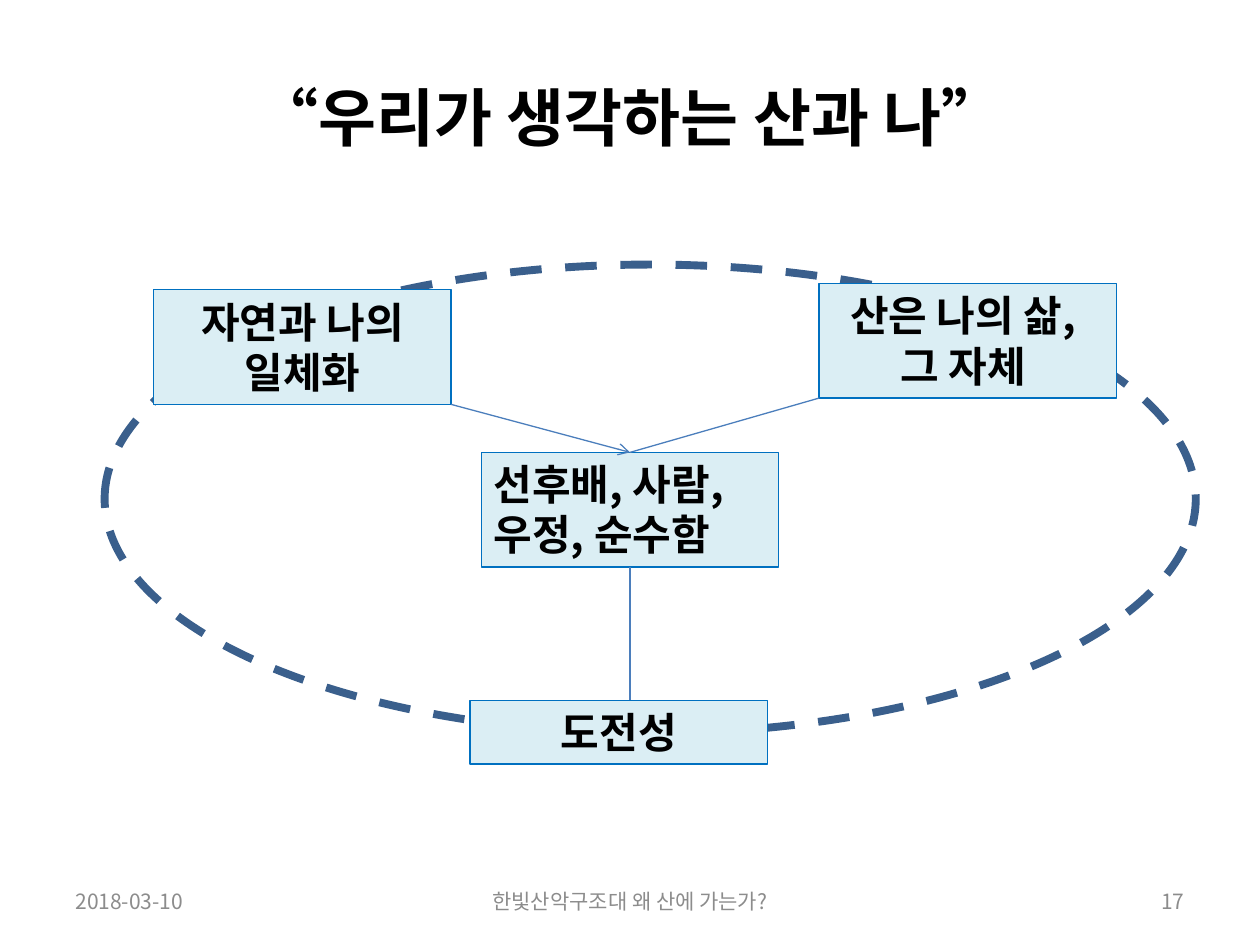
from dataclasses import dataclass

from lxml.etree import SubElement as Sub
from pptx import Presentation
from pptx.dml.color import RGBColor as RGB
from pptx.enum.dml import MSO_LINE as Dash
from pptx.enum.shapes import MSO_CONNECTOR as Link, MSO_SHAPE as Kind
from pptx.enum.text import MSO_ANCHOR as Anchor, PP_ALIGN as Align
from pptx.oxml.ns import qn
from pptx.util import Pt


@dataclass(frozen=True)
class Theme:
    ink: RGB = RGB(0, 0, 0)
    gray: RGB = RGB(0x8C, 0x8C, 0x8C)
    pale: RGB = RGB(0xDB, 0xEE, 0xF4)
    edge: RGB = RGB(0x00, 0x70, 0xC0)
    ring: RGB = RGB(0x3A, 0x5F, 0x8C)
    link: RGB = RGB(0x4B, 0x7E, 0xBC)
    head: int = 36
    body: int = 24
    foot: int = 12
    latin: str = "Arial"
    korean: str = "Noto Sans CJK KR"


theme = Theme()


def write(shape, text, size, color=theme.ink, bold=True, align=Align.CENTER,
          anchor=Anchor.MIDDLE, font=theme.korean):
    frame = shape.text_frame
    frame.word_wrap = True
    frame.vertical_anchor = anchor
    para = frame.paragraphs[0]
    para.text = text
    para.alignment = align
    for run in para.runs:
        run.font.name = font
        run.font.size = Pt(size)
        run.font.bold = bold
        run.font.color.rgb = color
        Sub(run.font._element, qn("a:ea"), typeface=theme.korean)


def join(x1, y1, x2, y2):
    line = slide.shapes.add_connector(Link.STRAIGHT, x1, y1, x2, y2)
    line.line.color.rgb = theme.link
    line.line.width = Pt(0.75)
    Sub(line._element.spPr, qn("a:effectLst"))
    return line


deck = Presentation()
deck.slide_width, deck.slide_height = Pt(720), Pt(540)
slide = deck.slides.add_slide(deck.slide_layouts[6])

# Dashed ring behind the boxes
ring = slide.shapes.add_shape(Kind.OVAL, Pt(59.8), Pt(151.2), Pt(623.5), Pt(267.8))
ring.shadow.inherit = False
ring.fill.background()
ring.line.color.rgb = theme.ring
ring.line.width = Pt(4.5)
ring.line.dash_style = Dash.DASH

# Title and footer
title = slide.shapes.add_textbox(Pt(36), Pt(21.6), Pt(648), Pt(90))
write(title, "“우리가 생각하는 산과 나”", theme.head, font=theme.latin)

for left, width, text, align in (
    (36, 168, "2018-03-10", Align.LEFT),
    (246, 228, "한빛산악구조대 왜 산에 가는가?", Align.CENTER),
    (516, 168, "17", Align.RIGHT),
):
    note = slide.shapes.add_textbox(Pt(left), Pt(500.5), Pt(width), Pt(28.75))
    write(note, text, theme.foot, color=theme.gray, bold=False, align=align)

# Idea boxes
boxes = []
for left, top, height, text, align in (
    (275, 258.5, 65.5, "선후배, 사람, 우정, 순수함", Align.LEFT),
    (468, 162, 65.5, "산은 나의 삶, \v그 자체 ", Align.CENTER),
    (87.8, 165.6, 65.5, "자연과 나의 일체화", Align.CENTER),
    (268.6, 400.3, 36.4, "도전성", Align.CENTER),
):
    box = slide.shapes.add_shape(Kind.RECTANGLE, Pt(left), Pt(top), Pt(170), Pt(height))
    box.shadow.inherit = False
    box.fill.solid()
    box.fill.fore_color.rgb = theme.pale
    box.line.color.rgb = theme.edge
    box.line.width = Pt(0.75)
    write(box, text, theme.body, align=align, anchor=Anchor.TOP)
    boxes.append(box)
people, life, nature, dare = boxes

# Links through the middle box
mid = people.left + people.width // 2
arrow = join(nature.left + nature.width, nature.top + nature.height, mid, people.top)
arrow.end_connect(people, 0)
Sub(arrow.line._get_or_add_ln(), qn("a:tailEnd"), type="arrow")

side = join(mid, people.top, life.left, life.top + life.height)
side.begin_connect(people, 0)

stem = join(mid, people.top + people.height, mid, dare.top)
stem.begin_connect(people, 2)

deck.save("out.pptx")
